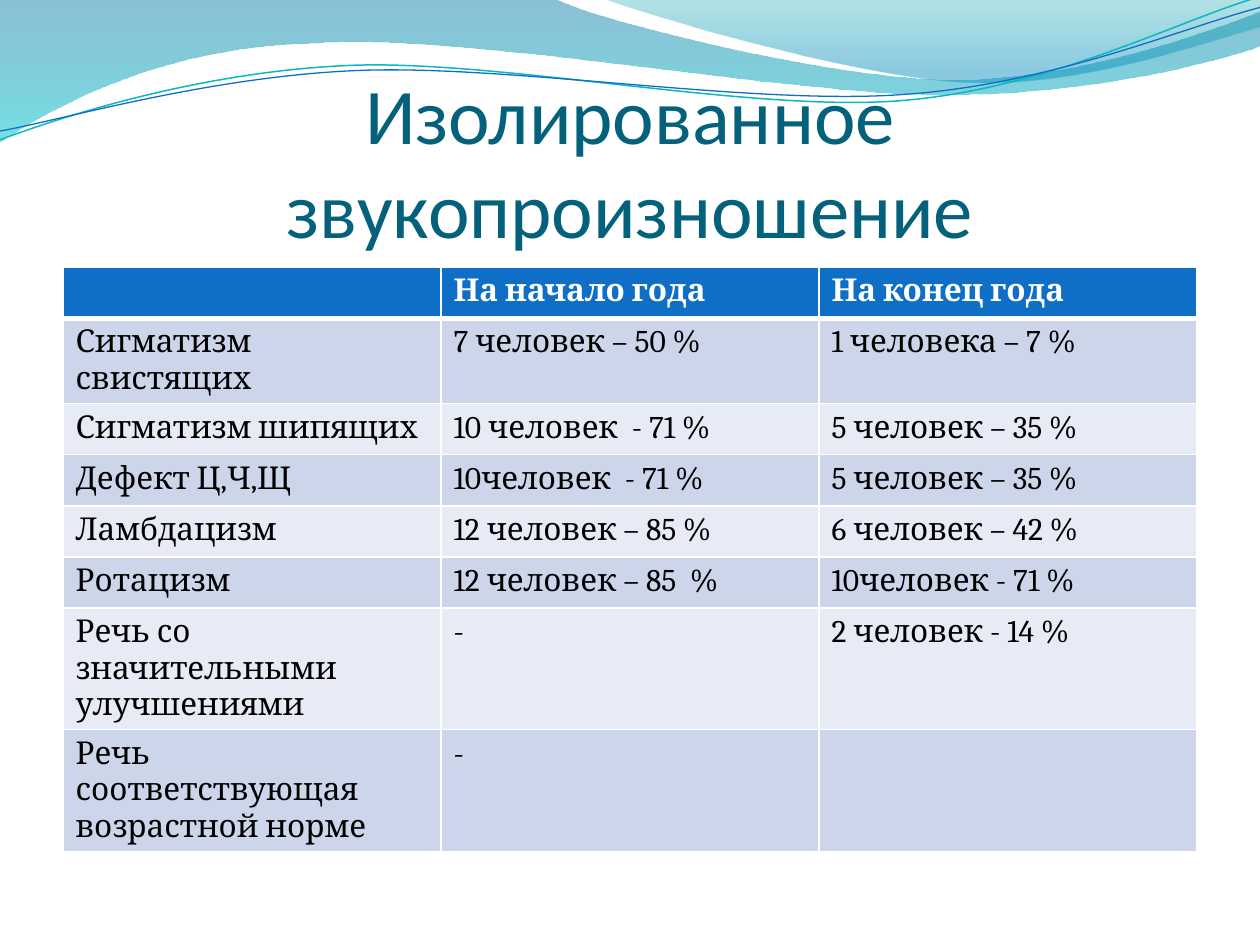
"""Build a slide with a wave header and a table of speech sound results."""
from math import cos, radians, sin

from lxml.etree import SubElement
from pptx import Presentation
from pptx.dml.color import RGBColor
from pptx.enum.text import MSO_ANCHOR, MSO_AUTO_SIZE, PP_ALIGN
from pptx.oxml.ns import qn
from pptx.util import Inches, Pt

THEME = {
    "title_font": "Calibri", "title_size": 45, "title": "04617B",
    "table_font": "Cambria", "table_size": 18, "text": "000000",
    "header": "0F6FC6", "header_text": "FFFFFF", "bands": ("CCD5EA", "E7EBF5"),
    "border": "FFFFFF", "thin": 1, "thick": 3,
    "wave": (("0074A1", 45, 0), ("00C6CF", 55, 1)),
    "crest": (("00A1A9", 30, 0), ("008BBF", 45, 0.8)),
    "teal_line": ("0AB8BF", 0.85), "blue_line": ("0F6FC6", 0.75),
}
TILT = 2.7
UNITS_PER_INCH = 1000


def turn(point, center):
    """Turn a point clockwise by the tilt angle about a center."""
    dx, dy = point[0] - center[0], point[1] - center[1]
    angle = radians(TILT)
    return (center[0] + dx * cos(angle) - dy * sin(angle),
            center[1] + dx * sin(angle) + dy * cos(angle))


def draw_curve(shapes, segments, closed, center=None):
    """Draw a freeform from lists of one point (line) or three points (curve)."""
    points = [point for segment in segments for point in segment]
    if center:
        points = [turn(point, center) for point in points]
    points = [(x * UNITS_PER_INCH, y * UNITS_PER_INCH) for x, y in points]
    builder = shapes.build_freeform(*points[0], scale=Inches(1) / UNITS_PER_INCH)
    builder.add_line_segments(points[1:], close=closed)
    shape = builder.convert_to_shape()
    shape.shadow.inherit = False
    lines = iter(list(shape._element.iter(qn("a:lnTo"))))
    for segment in segments[1:]:
        first, *others = [next(lines) for point in segment]
        if others:
            first.tag = qn("a:cubicBezTo")
        for other in others:
            first.append(other[0])
            other.getparent().remove(other)
    return shape


deck = Presentation()
deck.slide_width, deck.slide_height = Inches(10), Inches(7.5)
page = deck.slides.add_slide(deck.slide_layouts[5])
margin = int(deck.slide_width * 0.05)
content_width = int(deck.slide_width * 0.9)

waves = [
    ("wave", [
        [(0, 0)], [(4.4, -0.01)],
        [(4.76, 0.17), (6.64, 0.63), (7.58, 0.63)],
        [(8.53, 0.63), (9.58, 0.26), (10, 0.09)],
        [(10.01, 0.36)],
        [(9.83, 0.44), (8.7, 0.76), (7.46, 0.75)],
        [(6.22, 0.75), (3.82, 0.28), (2.57, 0.34)],
        [(1.29, 0.36), (0.46, 0.83), (-0.01, 1.13)]]),
    ("crest", [
        [(4.79, -0.01)],
        [(5.09, 0.11), (6.82, 0.62), (7.69, 0.65)],
        [(8.56, 0.69), (9.61, 0.32), (10, 0.21)],
        [(10, 0)]]),
]
for style, segments in waves:
    wave = draw_curve(page.shapes, segments, True)
    wave.line.fill.background()
    wave.fill.gradient()
    wave.fill.gradient_angle = 270
    for stop, (color, opacity, position) in zip(wave.fill.gradient_stops, THEME[style]):
        stop.color.rgb = RGBColor.from_string(color)
        stop.position = position
    colors = wave._element.spPr.iter(qn("a:srgbClr"))
    for node, (color, opacity, position) in zip(colors, THEME[style]):
        SubElement(node, qn("a:alpha")).set("val", str(opacity * 1000))

strands = [
    ("teal_line", (4.99, 0.58), [
        [(0, 1.11)],
        [(0.48, 0.93), (1.58, 0.57), (2.77, 0.52)],
        [(3.95, 0.47), (5.93, 0.89), (7.13, 0.8)],
        [(8.33, 0.71), (9.38, 0.15), (9.98, -0.02)]]),
    ("blue_line", (5, 0.59), [
        [(0, 1.04)],
        [(0.47, 0.96), (1.64, 0.61), (2.83, 0.56)],
        [(4.03, 0.51), (5.97, 0.84), (7.17, 0.75)],
        [(8.36, 0.67), (9.41, 0.21), (10, 0.06)]]),
]
for style, center, segments in strands:
    strand = draw_curve(page.shapes, segments, False, center)
    color, width = THEME[style]
    strand.rotation = -TILT
    strand.fill.background()
    strand.line.color.rgb = RGBColor.from_string(color)
    strand.line.width = Pt(width)

title = page.shapes.title
page.shapes._spTree.append(title._element)
title.left, title.top = margin, Inches(0.77)
title.width, title.height = content_width, Inches(1.25)
frame = title.text_frame
frame.text = "Изолированное звукопроизношение"
frame.word_wrap = True
frame.auto_size = MSO_AUTO_SIZE.NONE
frame.vertical_anchor = MSO_ANCHOR.BOTTOM
frame.margin_left = frame.margin_right = frame.margin_bottom = 0
frame.margin_top = Inches(0.05)
para = frame.paragraphs[0]
para.alignment = PP_ALIGN.CENTER
para.font.name = THEME["title_font"]
para.font.size = Pt(THEME["title_size"])
para.font.color.rgb = RGBColor.from_string(THEME["title"])

rows = [
    ("", "На начало года", "На конец года"),
    ("Сигматизм свистящих", "7 человек – 50 %", "1 человека – 7 %"),
    ("Сигматизм шипящих", "10 человек  - 71 %", "5 человек – 35 %"),
    ("Дефект Ц,Ч,Щ", "10человек  - 71 %", "5 человек – 35 %"),
    ("Ламбдацизм", "12 человек – 85 %", "6 человек – 42 %"),
    ("Ротацизм", "12 человек – 85  %", "10человек - 71 %"),
    ("Речь со значительными улучшениями", "-", "2 человек - 14 %"),
    ("Речь соответствующая возрастной норме", "-", ""),
]
row_height = Pt(29.2)
table = page.shapes.add_table(
    len(rows), len(rows[0]), margin, Inches(2.12),
    content_width, row_height * len(rows)).table
for row_index, row in enumerate(rows):
    is_header = row_index == 0
    fill = THEME["header"] if is_header else THEME["bands"][(row_index - 1) % 2]
    for column_index, text in enumerate(row):
        cell = table.cell(row_index, column_index)
        cell.text = text
        properties = cell._tc.get_or_add_tcPr()
        for side in ("lnL", "lnR", "lnT", "lnB"):
            under_header = (row_index, side) in ((0, "lnB"), (1, "lnT"))
            width = THEME["thick"] if under_header else THEME["thin"]
            border = SubElement(properties, qn(f"a:{side}"), w=str(Pt(width)))
            paint = SubElement(border, qn("a:solidFill"))
            SubElement(paint, qn("a:srgbClr"), val=THEME["border"])
        cell.fill.solid()
        cell.fill.fore_color.rgb = RGBColor.from_string(fill)
        font = cell.text_frame.paragraphs[0].font
        font.name = THEME["table_font"]
        font.size = Pt(THEME["table_size"])
        font.bold = is_header
        font.color.rgb = RGBColor.from_string(THEME["header_text" if is_header else "text"])

deck.save("out.pptx")
